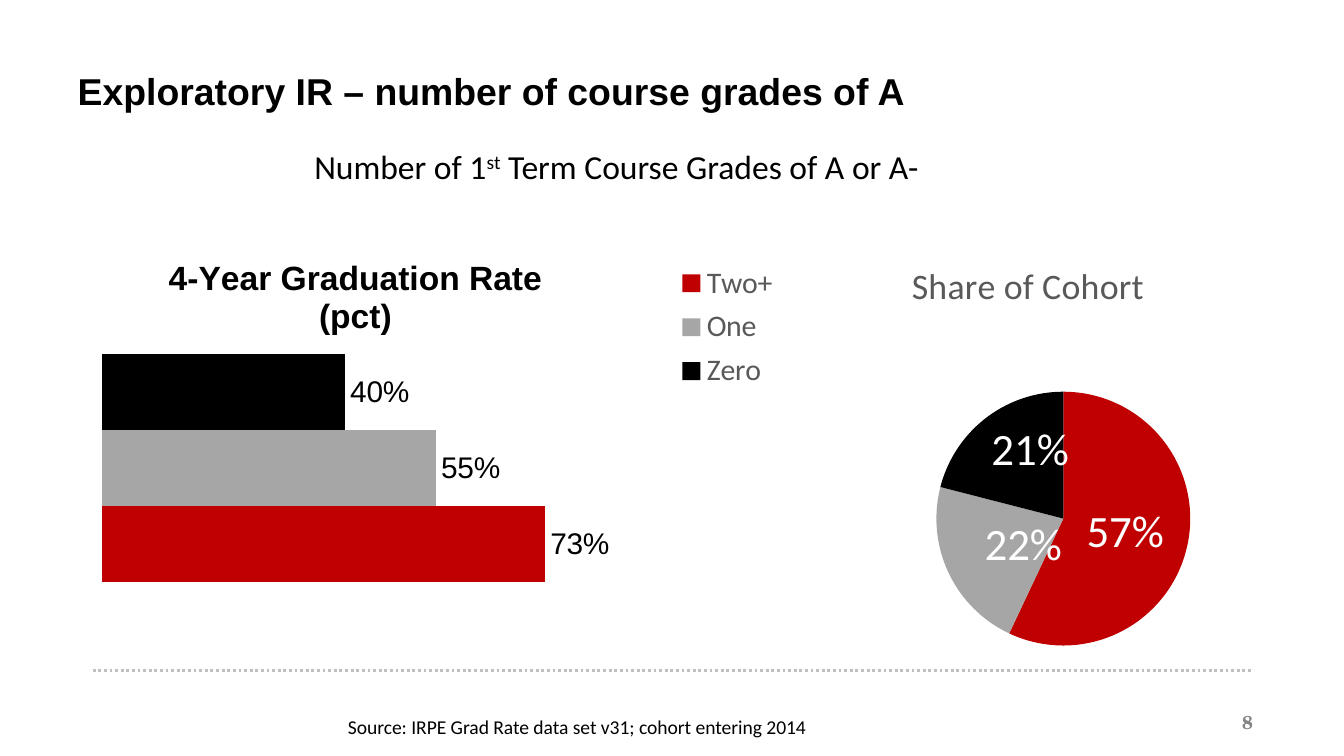
from lxml import etree
from pptx import Presentation
from pptx import util as u
from pptx.chart.data import CategoryChartData
from pptx.dml.color import RGBColor
from pptx.enum import chart as ch, dml, shapes, text
from pptx.oxml import parse_xml
from pptx.oxml.ns import nsdecls, qn

Inches, Pt = u.Inches, u.Pt
RED, GREY, BLACK = "C00000", "A6A6A6", "000000"


def style(font, size, name, color, bold=False):
    font.size, font.name, font.bold = Pt(size), name, bold
    font.color.rgb = RGBColor.from_string(color)


def layout(**values):
    """Manual chart layout, in fractions of the chart area."""
    items = "".join(f'<c:{key} val="{value}"/>' for key, value in values.items())
    return parse_xml(f'<c:layout {nsdecls("c")}><c:manualLayout>{items}'
                     '</c:manualLayout></c:layout>')


# Widescreen page, 16:9
deck = Presentation()
deck.slide_width, deck.slide_height = Inches(10), Inches(10 * 9 / 16)
page = deck.slides.add_slide(deck.slide_layouts[6])

# Dotted footer rule
rule = page.shapes.add_connector(shapes.MSO_CONNECTOR.STRAIGHT, Inches(0.69),
                                 Inches(4.99), Inches(9.32), Inches(4.99))
rule.line.color.rgb = RGBColor.from_string("C0C0C0")
rule.line.width = Pt(1.5)
rule.line.dash_style = dml.MSO_LINE.ROUND_DOT
etree.SubElement(rule._element.spPr, qn("a:effectLst"))

# Title, subtitle, source and page number
texts = [
    ((0.48, 0.52, 9.03, 1.15), ["Exploratory IR – number of course grades of A"],
     20, "Arial", BLACK, True),
    ((2.24, 1.04, 4.77, 0.4), ["Number of 1", "st", " Term Course Grades of A or A-"],
     18, "Calibri", BLACK, False),
    ((2.49, 5.27, 3.68, 0.28),
     ["Source: IRPE Grad Rate data set v31; cohort entering 2014"],
     10.5, "Calibri", BLACK, False),
    ((7.17, 5.22, 2.25, 0.3), ["8"], 10, "TeX Gyre Schola", "828383", True),
]
boxes = []
for place, parts, size, name, color, bold in texts:
    box = page.shapes.add_textbox(*map(Inches, place))
    para = box.text_frame.paragraphs[0]
    for part in parts:
        span = para.add_run()
        span.text = part
        style(span.font, size, name, color, bold)
    boxes.append(box)
title, subtitle, source, number = boxes
title.text_frame.word_wrap = number.text_frame.word_wrap = True
title.text_frame.paragraphs[0].line_spacing = 0.8
subtitle.text_frame.paragraphs[0].runs[1].font._element.set("baseline", "30000")
number.text_frame.vertical_anchor = text.MSO_ANCHOR.MIDDLE
number.text_frame.paragraphs[0].alignment = text.PP_ALIGN.RIGHT

# Graduation rate bars
data = CategoryChartData(number_format="0%")
data.categories = ["1"]
for index, rate in enumerate((0.73, 0.55, 0.4), 1):
    data.add_series(f"Series {index}", [rate])
bars = page.shapes.add_chart(ch.XL_CHART_TYPE.BAR_CLUSTERED, Inches(0.48), Inches(1.74),
                             Inches(4.33), Inches(3.28), data).chart
style(bars.font, 16, "Arial", BLACK)
bars.has_legend = False
bars.chart_title.text_frame.text = "4-Year Graduation Rate (pct)"
style(bars.chart_title.text_frame.paragraphs[0].runs[0].font, 18, "Arial", BLACK, True)
bars.category_axis.visible = bars.value_axis.visible = False
bars.value_axis.has_major_gridlines = False
bars.value_axis.minimum_scale, bars.value_axis.maximum_scale = 0, 0.8
plot = bars.plots[0]
plot.gap_width, plot.overlap, plot.vary_by_categories = 63, 0, False
for series, color in zip(plot.series, (RED, GREY, BLACK)):
    series.format.fill.solid()
    series.format.fill.fore_color.rgb = RGBColor.from_string(color)
    labels = series.data_labels
    labels.show_value = True
    labels.number_format, labels.number_format_is_linked = "0%", False
    labels.position = ch.XL_LABEL_POSITION.OUTSIDE_END
    style(labels.font, 16, "Arial", BLACK)

# Cohort share pie
data = CategoryChartData(number_format="0%")
data.categories = ["Two+", "One", "Zero"]
data.add_series("Series 1", [0.57, 0.22, 0.21])
pie = page.shapes.add_chart(ch.XL_CHART_TYPE.PIE, Inches(5), Inches(1.82),
                            Inches(4.34), Inches(3.24), data).chart
style(pie.font, 16, "Calibri", BLACK)
pie.chart_title.text_frame.text = "Share of Cohort"
style(pie.chart_title.text_frame.paragraphs[0].runs[0].font, 19.2, "Calibri", "595959")
pie.has_legend = True
pie.legend.position = ch.XL_LEGEND_POSITION.LEFT
pie.legend.include_in_layout = False
style(pie.legend.font, 16, "Calibri", "595959")
plot = pie.plots[0]
plot.vary_by_categories = True
series = plot.series[0]
labels = series.data_labels
labels.show_value, labels.show_percentage = True, False
labels.number_format, labels.number_format_is_linked = "0%", False
labels.position = ch.XL_LABEL_POSITION.CENTER
style(labels.font, 24, "Calibri", "FFFFFF")
for index, color in enumerate((RED, GREY, BLACK)):
    fill = series.points[index].format.fill
    fill.solid()
    fill.fore_color.rgb = RGBColor.from_string(color)

# Nudge the labels of the two smaller slices
for index, x, y in ((1, 0.03, 0), (2, 0.01, -0.04)):
    label = series.points[index].data_label
    style(label.font, 24, "Calibri", "FFFFFF")
    label.position = ch.XL_LABEL_POSITION.CENTER
    item = labels._element.findall(qn("c:dLbl"))[-1]
    item.find(qn("c:idx")).addnext(layout(x=x, y=y))

# Place plot areas, pie title and legend
placements = [
    (bars, "plotArea", None, dict(x=0.065, y=0.218, w=0.834, h=0.627)),
    (pie, "plotArea", None, dict(x=0.453, y=0.338, w=0.436, h=0.583)),
    (pie, "title", "tx", dict(x=0.4, y=0.02)),
    (pie, "legend", "legendPos", dict(x=0, y=0.03, w=0.19, h=0.32)),
]
for chart, part, before, values in placements:
    element = chart._chartSpace.chart.find(qn(f"c:{part}"))
    for old in element.findall(qn("c:layout")):
        element.remove(old)
    target = dict(layoutTarget="inner") if part == "plotArea" else {}
    new = layout(**target, xMode="edge", yMode="edge", **values)
    if before:
        element.find(qn(f"c:{before}")).addnext(new)
    else:
        element.insert(0, new)

deck.save("out.pptx")
